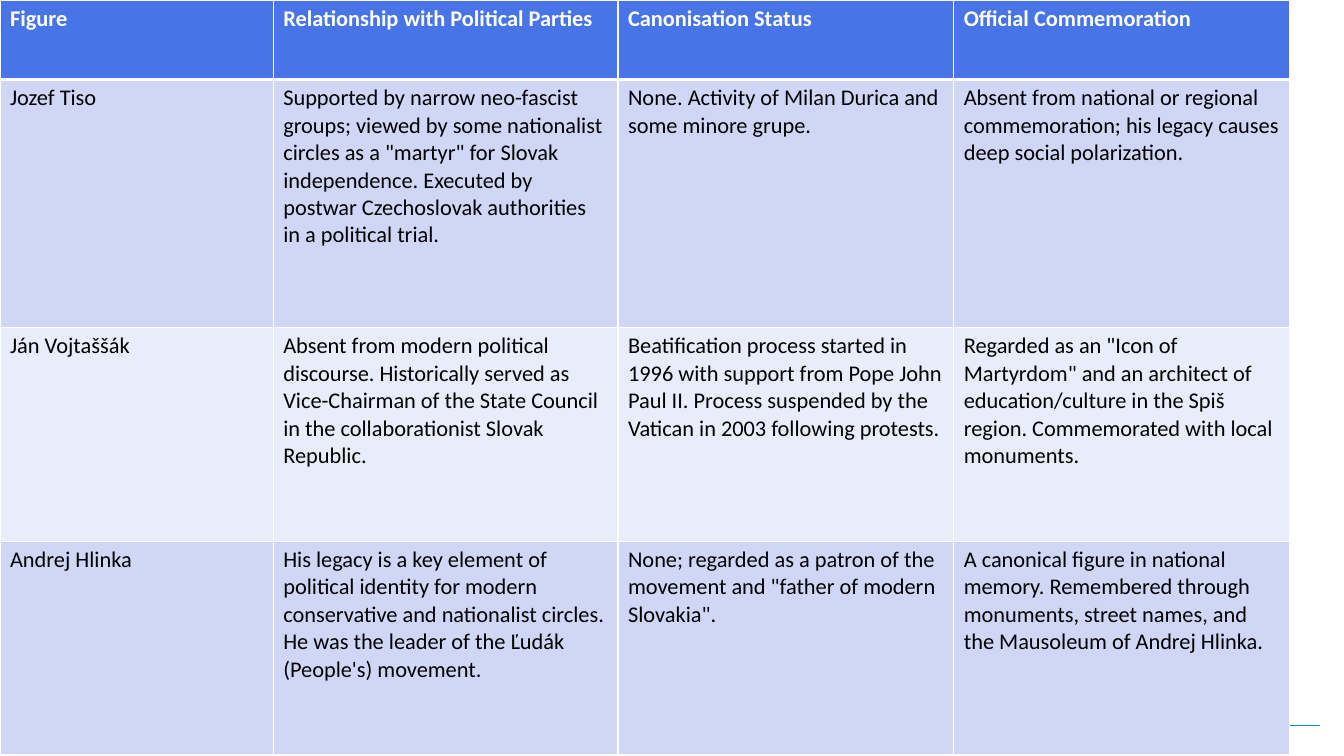
from dataclasses import dataclass

from lxml.etree import SubElement
from pptx import Presentation
from pptx.dml.color import RGBColor as RGB
from pptx.enum.shapes import MSO_CONNECTOR as CONN
from pptx.oxml.ns import qn
from pptx.util import Inches, Pt


@dataclass(frozen=True)
class Theme:
    """Colours, type and line sizes of the slide."""
    font: str = "Calibri"
    size: int = 16
    header: str = "4775E7"
    bands: tuple = ("CFD6F6", "E9ECFA")
    light: str = "FFFFFF"
    dark: str = "000000"
    accent: str = "198AB1"
    border: float = 1
    header_border: float = 3
    rule: float = 0.5


THEME = Theme()
WIDTH, HEIGHT = 13.33, 7.5
COLUMNS = (2.71, 3.42, 3.33, 3.33)
ROWS = (0.79, 2.46, 2.12, 2.12)

FIGURES = (
    ("Figure", "Relationship with Political Parties",
     "Canonisation Status", "Official Commemoration"),
    ("Jozef Tiso",
     "Supported by narrow neo-fascist groups; viewed by some nationalist "
     "circles as a \"martyr\" for Slovak independence. Executed by postwar "
     "Czechoslovak authorities in a political trial.",
     "None. Activity of Milan Durica and some minore grupe.",
     "Absent from national or regional commemoration; his legacy causes "
     "deep social polarization."),
    ("Ján Vojtaššák",
     "Absent from modern political discourse. Historically served as "
     "Vice-Chairman of the State Council in the collaborationist Slovak "
     "Republic.",
     "Beatification process started in 1996 with support from Pope John "
     "Paul II. Process suspended by the Vatican in 2003 following protests.",
     "Regarded as an \"Icon of Martyrdom\" and an architect of "
     "education/culture in the Spiš region. Commemorated with local "
     "monuments."),
    ("Andrej Hlinka",
     "His legacy is a key element of political identity for modern "
     "conservative and nationalist circles. He was the leader of the Ľudák "
     "(People's) movement.",
     "None; regarded as a patron of the movement and \"father of modern "
     "Slovakia\".",
     "A canonical figure in national memory. Remembered through monuments, "
     "street names, and the Mausoleum of Andrej Hlinka."),
)


def set_borders(cell, widths):
    tc_pr = cell._tc.get_or_add_tcPr()
    for i, (side, width) in enumerate(widths.items()):
        ln = tc_pr.makeelement(qn(f"a:ln{side}"), {"w": str(Pt(width))})
        fill = SubElement(ln, qn("a:solidFill"))
        SubElement(fill, qn("a:srgbClr"), val=THEME.light)
        tc_pr.insert(i, ln)


def fill_cell(cell, text, row):
    is_header = row == 0
    cell.fill.solid()
    cell.fill.fore_color.rgb = RGB.from_string(
        THEME.header if is_header else THEME.bands[(row - 1) % 2])
    p = cell.text_frame.paragraphs[0]
    r = p.add_run()
    r.text = text
    for name, value in {"name": THEME.font, "size": Pt(THEME.size),
                        "bold": is_header}.items():
        setattr(r.font, name, value)
    r.font.color.rgb = RGB.from_string(
        THEME.light if is_header else THEME.dark)
    thick, thin = THEME.header_border, THEME.border
    set_borders(cell, {"L": thin, "R": thin,
                       "T": thick if row == 1 else thin,
                       "B": thick if is_header else thin})


def add_figures_table(s):
    table = s.shapes.add_table(
        len(ROWS), len(COLUMNS), 0, 0,
        Inches(sum(COLUMNS)), Inches(sum(ROWS))).table
    for column, width in zip(table.columns, COLUMNS):
        column.width = Inches(width)
    for row, height in zip(table.rows, ROWS):
        row.height = Inches(height)
    for i, texts in enumerate(FIGURES):
        for j, text in enumerate(texts):
            fill_cell(table.cell(i, j), text, i)


def add_rule(s, left, right, y):
    sp = s.shapes.add_connector(
        CONN.STRAIGHT, Inches(left), Inches(y), Inches(right), Inches(y))
    sp.line.color.rgb = RGB.from_string(THEME.accent)
    sp.line.width = Pt(THEME.rule)
    SubElement(sp._element.spPr, qn("a:effectLst"))


def main():
    """Build the slide comparing three figures and save it."""
    prs = Presentation()
    prs.slide_width, prs.slide_height = Inches(WIDTH), Inches(HEIGHT)
    s = prs.slides.add_slide(prs.slide_layouts[6])
    add_rule(s, WIDTH * 0.96, WIDTH * 0.982, HEIGHT * 0.959)
    add_figures_table(s)
    prs.save("out.pptx")


if __name__ == "__main__":
    main()
